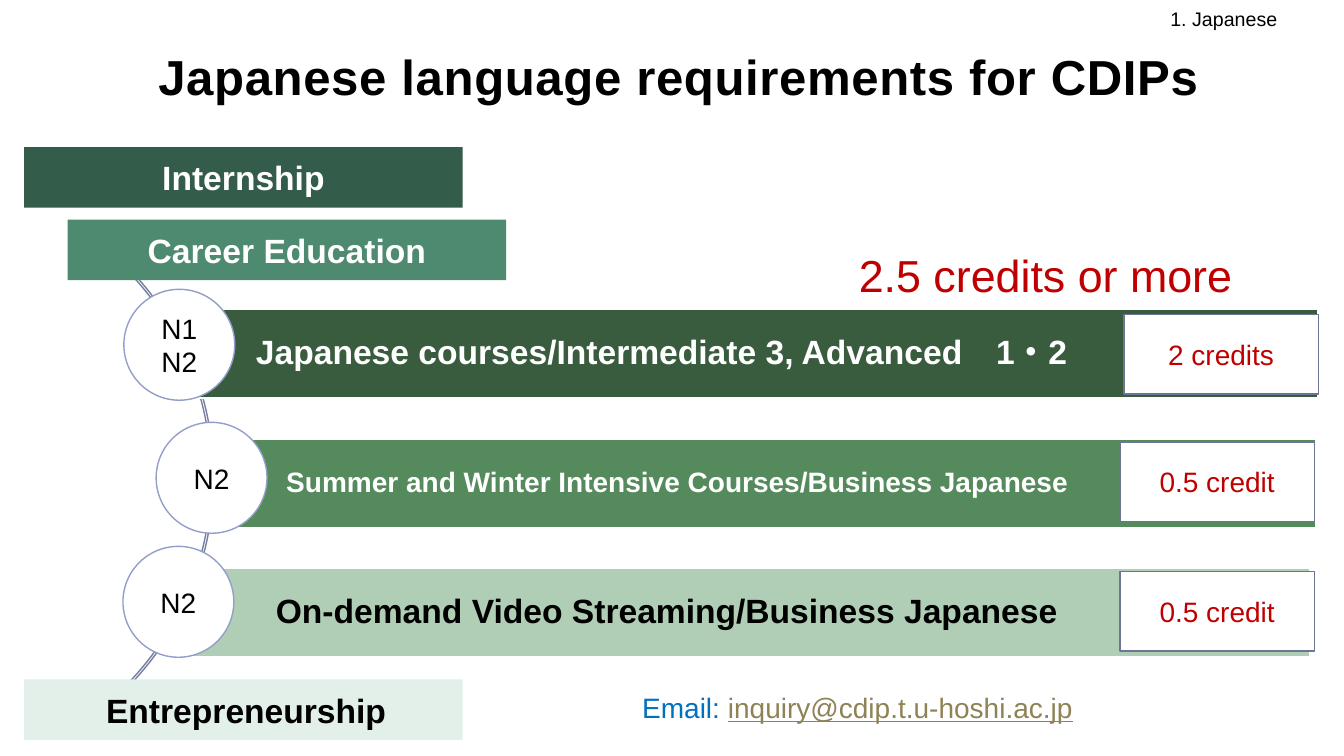
from dataclasses import dataclass

from pptx import Presentation
from pptx.dml.color import RGBColor
from pptx.enum.shapes import MSO_SHAPE
from pptx.enum.text import MSO_ANCHOR, PP_ALIGN
from pptx.shapes.autoshape import Shape
from pptx.slide import Slide
from pptx.util import Inches, Pt

SLIDE_WIDTH = Inches(13.333)
SLIDE_HEIGHT = Inches(7.5)


@dataclass(frozen=True)
class Theme:
    font: str = "Arial"
    white: str = "FFFFFF"
    black: str = "000000"
    red: str = "C00000"
    blue: str = "0070C0"
    link: str = "8E8256"
    arc_line: str = "767FA2"
    level_line: str = "939ECA"
    credit_line: str = "6D7595"
    title_size: float = 35.1
    total_size: float = 32
    heading_size: float = 24
    body_size: float = 20
    label_size: float = 14


THEME = Theme()


@dataclass(frozen=True)
class Area:
    """A rectangle in percent of the slide's width and height."""
    left: float
    top: float
    width: float
    height: float


@dataclass(frozen=True)
class TextStyle:
    size: float
    color: str
    bold: bool = False
    align: PP_ALIGN = PP_ALIGN.CENTER
    anchor: MSO_ANCHOR = MSO_ANCHOR.MIDDLE
    line_spacing: float = 1.0
    left_inset: float = 0
    top_inset: float = 0


@dataclass(frozen=True)
class Banner:
    text: str
    left: float
    top: float
    fill: str
    color: str
    left_inset: float = 0


@dataclass(frozen=True)
class Course:
    text: str
    levels: str
    credits: str
    bar_left: float
    bar_width: float
    fill: str
    color: str
    size: float
    inset: float
    circle_left: float
    circle_top: float
    credit_left: float
    credit_drop: float


BANNER_WIDTH, BANNER_HEIGHT = 32.63, 8
BAR_TOP, BAR_PITCH, BAR_HEIGHT = 40.93, 17.13, 11.73
CIRCLE_WIDTH, CIRCLE_HEIGHT = 8.25, 14.67
CREDIT_WIDTH, CREDIT_HEIGHT = 14.48, 10.53

BANNERS = [
    Banner("Career Education", 5.03, 29.07, "4E8A6F", THEME.white),
    Banner("Internship", 1.8, 19.47, "345C4A", THEME.white),
    Banner("Entrepreneurship", 1.8, 89.87, "E3EFE9", THEME.black, 0.4),
]

COURSES = [
    Course("Japanese courses/Intermediate 3, Advanced　1・2", "N1\nN2", "2 credits",
           13.8, 84.22, "395C3E", THEME.white, THEME.heading_size, 5.25,
           9.22, 38.27, 83.62, 0.67),
    Course("Summer and Winter Intensive Courses/Business Japanese", "N2", "0.5 credit",
           16.05, 81.83, "558A5D", THEME.white, THEME.body_size, 5.25,
           11.62, 55.87, 83.33, 0.4),
    Course("On-demand Video Streaming/Business Japanese", "N2", "0.5 credit",
           13.2, 84.22, "B0CEB5", THEME.black, THEME.heading_size, 7.33,
           9.15, 72.27, 83.33, 0.4),
]


def across(percent: float) -> int:
    return round(SLIDE_WIDTH * percent / 100)


def down(percent: float) -> int:
    return round(SLIDE_HEIGHT * percent / 100)


def box(area: Area) -> tuple[int, int, int, int]:
    return across(area.left), down(area.top), across(area.width), down(area.height)


def write(shape: Shape, text: str, style: TextStyle) -> None:
    frame = shape.text_frame
    frame.word_wrap = True
    frame.vertical_anchor = style.anchor
    frame.margin_left, frame.margin_top = across(style.left_inset), down(style.top_inset)
    frame.margin_right = frame.margin_bottom = 0
    frame.text = text
    for paragraph in frame.paragraphs:
        paragraph.alignment = style.align
        paragraph.line_spacing = style.line_spacing
        paragraph.font.name = THEME.font
        paragraph.font.size = Pt(style.size)
        paragraph.font.bold = style.bold
        paragraph.font.color.rgb = RGBColor.from_string(style.color)


def add_figure(slide: Slide, kind: MSO_SHAPE, area: Area,
               fill: str | None = None, line: str | None = None) -> Shape:
    shape = slide.shapes.add_shape(kind, *box(area))
    shape.shadow.inherit = False
    if fill:
        shape.fill.solid()
        shape.fill.fore_color.rgb = RGBColor.from_string(fill)
    else:
        shape.fill.background()
    if line:
        shape.line.color.rgb = RGBColor.from_string(line)
        shape.line.width = Pt(1)
    else:
        shape.line.fill.background()
    return shape


def add_text(slide: Slide, area: Area, text: str, style: TextStyle) -> Shape:
    shape = slide.shapes.add_textbox(*box(area))
    write(shape, text, style)
    return shape


def add_banner(slide: Slide, banner: Banner) -> None:
    area = Area(banner.left, banner.top, BANNER_WIDTH, BANNER_HEIGHT)
    shape = add_figure(slide, MSO_SHAPE.RECTANGLE, area, banner.fill)
    write(shape, banner.text, TextStyle(THEME.heading_size, banner.color, bold=True,
                                        left_inset=banner.left_inset))


def add_course(slide: Slide, course: Course, row: int) -> None:
    top = BAR_TOP + row * BAR_PITCH
    bar = add_figure(slide, MSO_SHAPE.RECTANGLE,
                     Area(course.bar_left, top, course.bar_width, BAR_HEIGHT),
                     course.fill, THEME.white)
    write(bar, course.text, TextStyle(course.size, course.color, bold=True, align=PP_ALIGN.LEFT,
                                      line_spacing=0.9, left_inset=course.inset))
    circle = add_figure(slide, MSO_SHAPE.OVAL,
                        Area(course.circle_left, course.circle_top, CIRCLE_WIDTH, CIRCLE_HEIGHT),
                        THEME.white, THEME.level_line)
    write(circle, course.levels, TextStyle(THEME.body_size, THEME.black))
    credit = add_figure(slide, MSO_SHAPE.RECTANGLE,
                        Area(course.credit_left, top + course.credit_drop,
                             CREDIT_WIDTH, CREDIT_HEIGHT),
                        THEME.white, THEME.credit_line)
    write(credit, course.credits, TextStyle(THEME.body_size, THEME.red))


def main() -> None:
    presentation = Presentation()
    presentation.slide_width, presentation.slide_height = SLIDE_WIDTH, SLIDE_HEIGHT
    slide = presentation.slides.add_slide(presentation.slide_layouts[6])

    # Arc behind the courses
    arc = add_figure(slide, MSO_SHAPE.BLOCK_ARC, Area(-28.58, 23.6, 44.48, 79.07),
                     line=THEME.arc_line)
    for index, value in enumerate((189, 27, 0.004)):
        arc.adjustments[index] = value

    # Courses and banners
    for row, course in enumerate(COURSES):
        add_course(slide, course, row)
    for banner in BANNERS:
        add_banner(slide, banner)

    # Title and corner label
    title = add_text(slide, Area(6.97, 5.73, 86.25, 12.13),
                     "Japanese language requirements for CDIPs",
                     TextStyle(THEME.title_size, THEME.black, bold=True, anchor=MSO_ANCHOR.TOP,
                               line_spacing=1.05, left_inset=0.9))
    title.text_frame.paragraphs[0].runs[0].font._element.set("spc", "50")

    def note(size: float, color: str) -> TextStyle:
        return TextStyle(size, color, align=PP_ALIGN.LEFT, anchor=MSO_ANCHOR.TOP,
                         left_inset=0.75, top_inset=0.67)

    add_text(slide, Area(86.33, 0.27, 11.85, 4.53), "1. Japanese",
             note(THEME.label_size, THEME.black))

    # Credit total and contact
    add_text(slide, Area(63.15, 32.13, 29.55, 8.53), "2.5 credits or more",
             note(THEME.total_size, THEME.red))
    email = add_text(slide, Area(47.03, 90.67, 46.65, 5.87), "Email: ",
                     note(THEME.body_size, THEME.blue))
    address = email.text_frame.paragraphs[0].add_run()
    address.text = "inquiry@cdip.t.u-hoshi.ac.jp"
    address.font.underline = True
    address.font.color.rgb = RGBColor.from_string(THEME.link)

    presentation.save("out.pptx")


if __name__ == "__main__":
    main()
